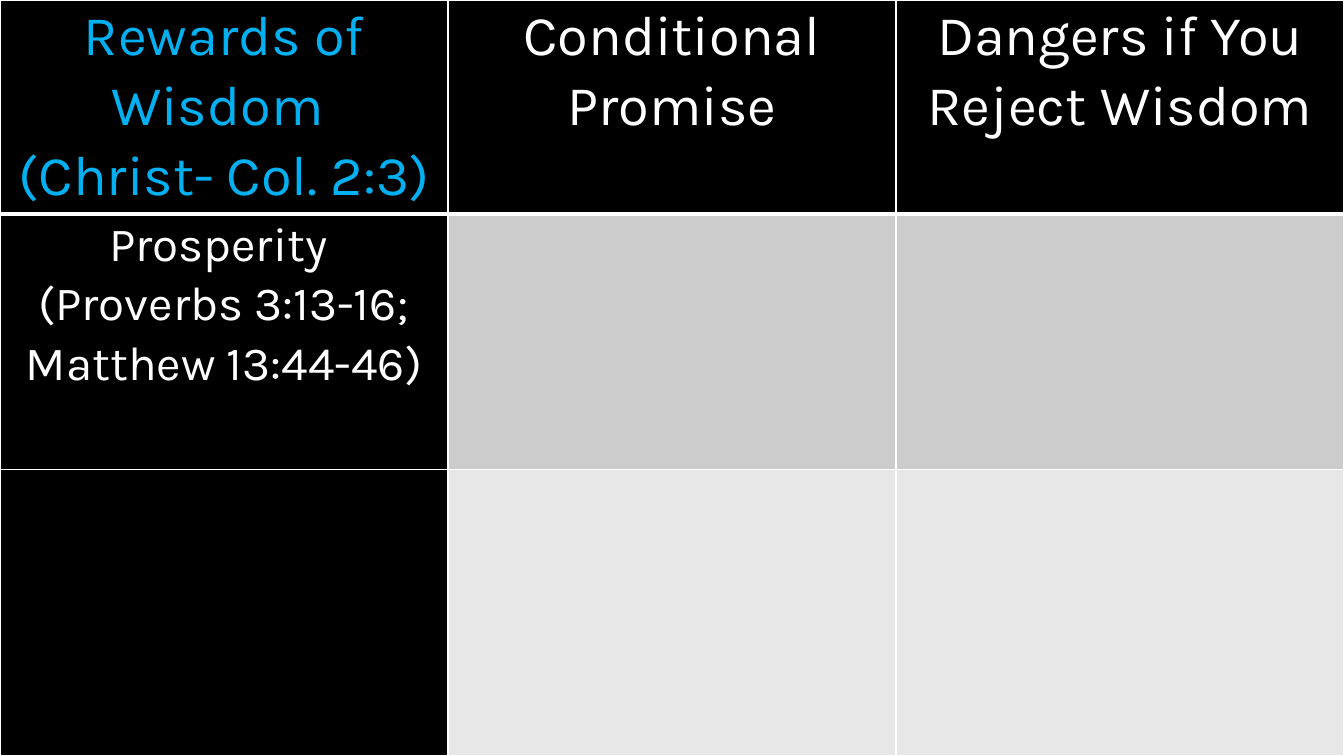
from lxml.etree import SubElement
from pptx import Presentation
from pptx.dml.color import RGBColor
from pptx.enum.text import PP_ALIGN
from pptx.oxml.ns import qn
from pptx.util import Pt

CENTER = PP_ALIGN.CENTER
BLACK, WHITE, BLUE = "000000", "FFFFFF", "00B0F0"
DARK_GRAY, LIGHT_GRAY = "CCCCCC", "E7E7E7"
PAGE_WIDTH, PAGE_HEIGHT = 960, 540
ROW_HEIGHTS = [152.64, 182.88, 204.48]
ROW_FILLS = [
    [BLACK, BLACK, BLACK],
    [BLACK, DARK_GRAY, DARK_GRAY],
    [BLACK, LIGHT_GRAY, LIGHT_GRAY],
]
HEADINGS = [
    (["Rewards of Wisdom ", "(Christ- Col. 2:3)"], BLUE),
    (["Conditional Promise"], WHITE),
    (["Dangers if You Reject Wisdom"], WHITE),
]
REWARD = ["Prosperity ", "(Proverbs 3:13-16; Matthew 13:44-46)"]


def color(code):
    return RGBColor.from_string(code)


class WisdomPage:
    font_name = "Karla"
    line_spacing = 1.07
    side_inset = 5.04

    def __init__(self, deck):
        self.page = deck.slides.add_slide(deck.slide_layouts[6])

    def background(self, code):
        fill = self.page.background.fill
        fill.solid()
        fill.fore_color.rgb = color(code)

    def table(self, width, row_heights, row_fills):
        columns = len(row_fills[0])
        frame = self.page.shapes.add_table(
            len(row_heights), columns, 0, 0, Pt(width), Pt(sum(row_heights))
        )
        table = frame.table
        table.first_row = False
        table.horz_banding = False
        for column in table.columns:
            column.width = Pt(width / columns)
        for index, (height, fills) in enumerate(zip(row_heights, row_fills)):
            table.rows[index].height = Pt(height)
            top = 3 if index == 1 else 1
            bottom = 3 if index == 0 else 1
            for cell, code in zip(table.rows[index].cells, fills):
                self.borders(cell, {"lnL": 1, "lnR": 1, "lnT": top, "lnB": bottom})
                cell.fill.solid()
                cell.fill.fore_color.rgb = color(code)
        return table

    def borders(self, cell, widths):
        properties = cell._tc.get_or_add_tcPr()
        for side, width in widths.items():
            line = SubElement(properties, qn(f"a:{side}"), w=str(Pt(width)))
            fill = SubElement(line, qn("a:solidFill"))
            SubElement(fill, qn("a:srgbClr"), val=WHITE)

    def cell_text(self, cell, lines, size, code):
        cell.margin_left = cell.margin_right = Pt(self.side_inset)
        cell.margin_top = cell.margin_bottom = 0
        cell.text_frame.text = "\n".join(lines)
        for paragraph in cell.text_frame.paragraphs:
            paragraph.alignment = CENTER
            paragraph.line_spacing = self.line_spacing
            for span in paragraph.runs:
                span.font.name = self.font_name
                span.font.size = Pt(size)
                span.font.bold = False
                span.font.color.rgb = color(code)


def main():
    deck = Presentation()
    deck.slide_width, deck.slide_height = Pt(PAGE_WIDTH), Pt(PAGE_HEIGHT)
    page = WisdomPage(deck)
    page.background(BLACK)
    table = page.table(PAGE_WIDTH, ROW_HEIGHTS, ROW_FILLS)
    for column, (lines, code) in enumerate(HEADINGS):
        page.cell_text(table.cell(0, column), lines, 40, code)
    page.cell_text(table.cell(1, 0), REWARD, 34, WHITE)
    deck.save("out.pptx")


if __name__ == "__main__":
    main()
